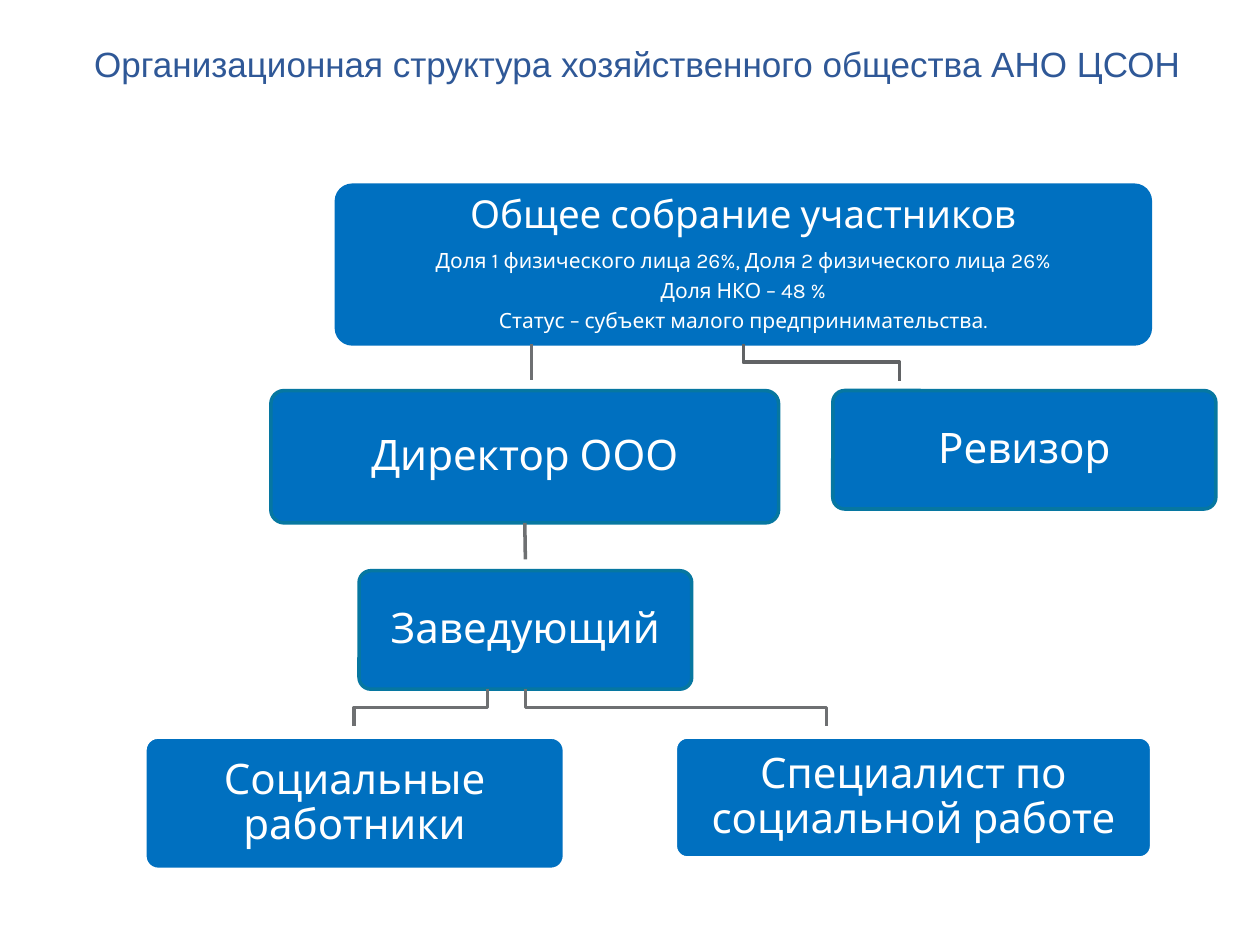
from dataclasses import dataclass

from lxml.etree import SubElement
from pptx import Presentation
from pptx.dml.color import RGBColor
from pptx.enum.shapes import MSO_CONNECTOR as Connector, MSO_SHAPE as Preset
from pptx.enum.text import MSO_ANCHOR as Anchor, PP_ALIGN as Align
from pptx.oxml.ns import qn
from pptx.util import Inches, Pt

BLUE, TEAL, WHITE, GREY = "0070C0", "0677A1", "FFFFFF", "6E7072"
DROP = 0.29
LINE_WIDTH = Pt(2)


@dataclass
class Post:
    left: float
    top: float
    width: float
    height: float
    lines: list[tuple[str, int]]
    border: str = TEAL
    inset: float = 0.13


@dataclass
class Branch:
    start: float
    end: float
    top: float
    color: str = GREY


def rgb(value: str) -> RGBColor:
    return RGBColor.from_string(value)


def apply_format(target, values: dict) -> None:
    for name, value in values.items():
        setattr(target, name, value)


def write_line(paragraph, text: str, size: int, font: str, color: str) -> None:
    paragraph.alignment = Align.CENTER
    run = paragraph.add_run()
    run.text = text
    apply_format(run.font, {"size": Pt(size), "name": font})
    run.font.color.rgb = rgb(color)


def style_line(line, color: str) -> None:
    line.color.rgb = rgb(color)
    line.width = LINE_WIDTH


def draw_title(slide, text: str) -> None:
    title = slide.shapes.add_textbox(Inches(0.06), Inches(0.29), Inches(10), Inches(0.44))
    title.text_frame.word_wrap = True
    write_line(title.text_frame.paragraphs[0], text, 20, "Arial", "2F5897")


def draw_post(slide, post: Post):
    box = slide.shapes.add_shape(
        Preset.ROUNDED_RECTANGLE,
        Inches(post.left), Inches(post.top), Inches(post.width), Inches(post.height),
    )
    box.adjustments[0] = 0.1
    box.shadow.inherit = False
    box.fill.solid()
    box.fill.fore_color.rgb = rgb(BLUE)
    style_line(box.line, post.border)
    frame = box.text_frame
    margin = Inches(post.inset)
    apply_format(frame, {
        "word_wrap": True, "vertical_anchor": Anchor.MIDDLE,
        "margin_left": margin, "margin_right": margin,
        "margin_top": margin, "margin_bottom": margin,
    })
    for index, (text, size) in enumerate(post.lines):
        paragraph = frame.add_paragraph() if index else frame.paragraphs[0]
        paragraph.line_spacing = 0.9
        spacing = SubElement(paragraph._p.get_or_add_pPr(), qn("a:spcAft"))
        SubElement(spacing, qn("a:spcPct")).set("val", "35000")
        write_line(paragraph, text, size, "Karla", WHITE)
    return box


def draw_stem(slide, x: float, top: float):
    stem = slide.shapes.add_connector(
        Connector.STRAIGHT, Inches(x), Inches(top), Inches(x), Inches(top + DROP)
    )
    style_line(stem.line, GREY)
    SubElement(stem._element.spPr, qn("a:effectLst"))
    return stem


def draw_branch(slide, branch: Branch) -> None:
    middle, bottom = branch.top + DROP / 2, branch.top + DROP
    corners = [(branch.start, middle), (branch.end, middle), (branch.end, bottom)]
    builder = slide.shapes.build_freeform(Inches(branch.start), Inches(branch.top))
    builder.add_line_segments([(Inches(x), Inches(y)) for x, y in corners], close=False)
    elbow = builder.convert_to_shape()
    elbow.shadow.inherit = False
    elbow.fill.background()
    style_line(elbow.line, branch.color)


ASSEMBLY = Post(2.67, 1.47, 6.46, 1.26, [
    ("Общее собрание участников", 22),
    ("Доля 1 физического лица 26%, Доля 2 физического лица 26%", 12),
    ("Доля НКО – 48 %", 12),
    ("Статус – субъект малого предпринимательства.", 12),
], BLUE)
DIRECTOR = Post(2.15, 3.1, 4.03, 1.05, [("Директор ООО", 24)])
SUBORDINATES = [
    Post(2.85, 4.53, 2.64, 0.94, [("Заведующий", 24)]),
    Post(1.15, 5.85, 3.33, 1.05, [("Социальные работники", 24)], WHITE),
    Post(5.36, 5.85, 3.78, 0.96, [("Специалист по социальной работе", 24)], WHITE),
    Post(6.61, 3.1, 3.04, 0.94, [("Ревизор", 24)]),
]
BRANCHES = [
    Branch(3.87, 2.81, 5.47),
    Branch(4.17, 6.56, 5.47),
    Branch(5.9, 7.14, 2.73, "616365"),
]


def main() -> None:
    deck = Presentation()
    deck.slide_width, deck.slide_height = Inches(10), Inches(7.5)
    slide = deck.slides.add_slide(deck.slide_layouts[6])
    draw_title(slide, "Организационная структура хозяйственного общества АНО ЦСОН")
    draw_post(slide, ASSEMBLY)
    draw_stem(slide, 4.22, 2.73)
    director = draw_post(slide, DIRECTOR)
    draw_stem(slide, 4.17, 4.15).begin_connect(director, 2)
    for post in SUBORDINATES:
        draw_post(slide, post)
    for branch in BRANCHES:
        draw_branch(slide, branch)
    deck.save("out.pptx")


if __name__ == "__main__":
    main()
